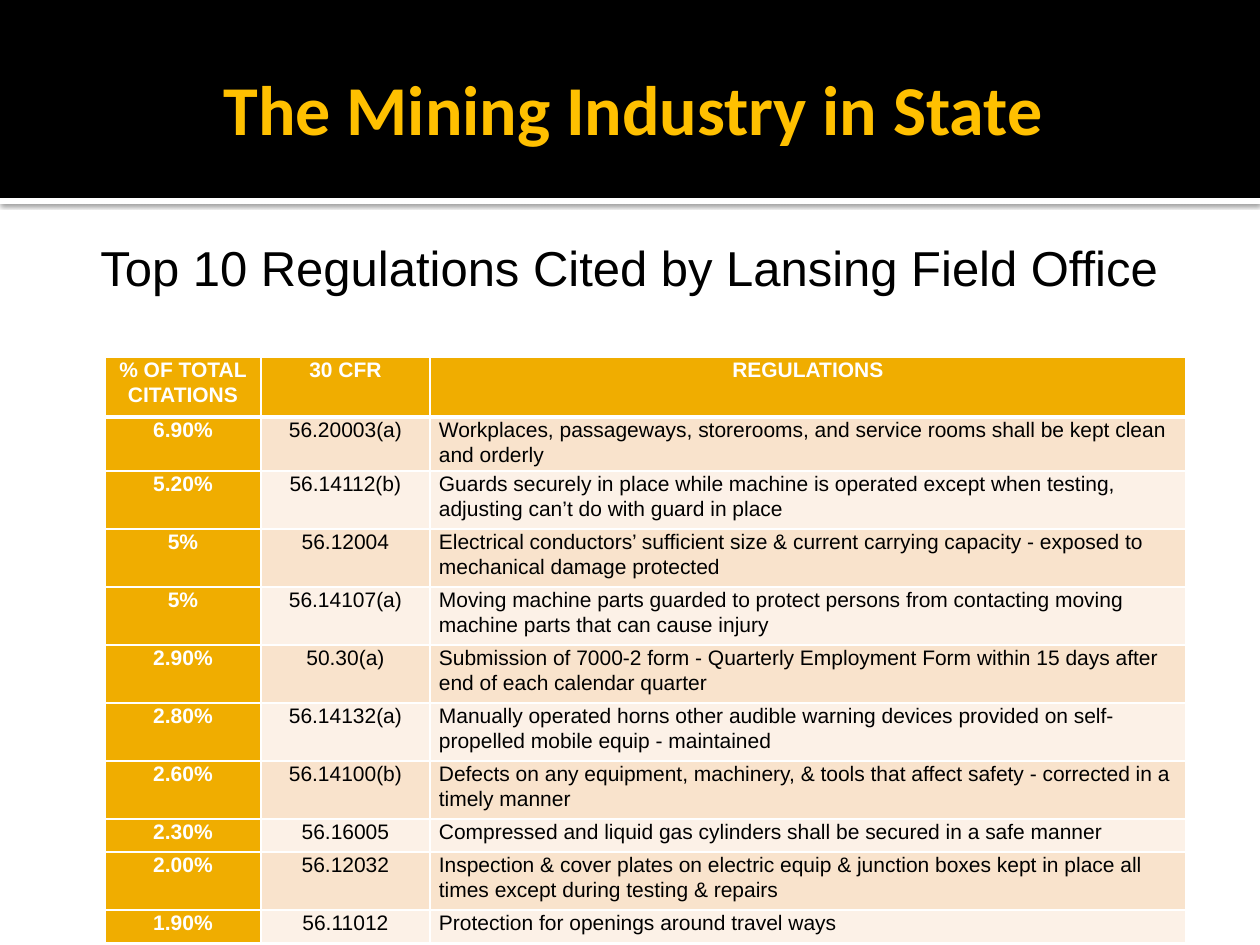
from lxml.etree import SubElement
from pptx import Presentation
from pptx.dml.color import RGBColor
from pptx.enum.shapes import MSO_SHAPE
from pptx.enum.text import MSO_ANCHOR, PP_ALIGN
from pptx.oxml.ns import qn
from pptx.util import Emu, Pt

PX_PER_INCH = 126
BLACK, WHITE, GOLD, AMBER = "000000", "FFFFFF", "FFC000", "F0AD00"
BANDS = ("F9E3CC", "FCF1E7")
COLUMN_WIDTHS = (156, 169, 756)
HEADER_HEIGHT, ONE_LINE, TWO_LINES = 60, 33, 58

HEADINGS = ("% OF TOTAL\nCITATIONS", "30 CFR", "REGULATIONS")
# Share of citations, section, regulation, row height
CITATIONS = (
    ("6.90%", "56.20003(a)", "Workplaces, passageways, storerooms, and service rooms "
     "shall be kept clean and orderly", ONE_LINE),
    ("5.20%", "56.14112(b)", "Guards securely in place while machine is operated except "
     "when testing, adjusting can’t do with guard in place", TWO_LINES),
    ("5%", "56.12004", "Electrical conductors’ sufficient size & current carrying "
     "capacity - exposed to mechanical damage protected", TWO_LINES),
    ("5%", "56.14107(a)", "Moving machine parts guarded to protect persons from "
     "contacting moving machine parts that can cause injury", TWO_LINES),
    ("2.90%", "50.30(a)", "Submission of 7000-2 form - Quarterly Employment Form within "
     "15 days after end of each calendar quarter", TWO_LINES),
    ("2.80%", "56.14132(a)", "Manually operated horns other audible warning devices "
     "provided on self- propelled mobile equip - maintained", TWO_LINES),
    ("2.60%", "56.14100(b)", "Defects on any equipment, machinery, & tools that affect "
     "safety - corrected in a timely manner", TWO_LINES),
    ("2.30%", "56.16005", "Compressed and liquid gas cylinders shall be secured in a "
     "safe manner", ONE_LINE),
    ("2.00%", "56.12032", "Inspection & cover plates on electric equip & junction boxes "
     "kept in place all times except during testing & repairs", TWO_LINES),
    ("1.90%", "56.11012", "Protection for openings around travel ways", ONE_LINE),
)


def px(length):
    return Emu(round(length * 914400 / PX_PER_INCH))


def color(value):
    return RGBColor.from_string(value)


def format_text(frame, font, size, fill, bold=False, align=PP_ALIGN.CENTER, spacing=None):
    for para in frame.paragraphs:
        para.alignment = align
        para.line_spacing = spacing
        for span in para.runs:
            span.font.name = font
            span.font.size = Pt(size)
            span.font.bold = bold
            span.font.color.rgb = color(fill)


def add_bar(page, left, top, width, height, fill):
    bar = page.shapes.add_shape(MSO_SHAPE.RECTANGLE, px(left), px(top), px(width), px(height))
    bar.shadow.inherit = False
    bar.fill.solid()
    bar.fill.fore_color.rgb = color(fill)
    bar.line.fill.background()
    return bar


def add_text(page, left, top, width, height, text, **style):
    box = page.shapes.add_textbox(px(left), px(top), px(width), px(height))
    box.text_frame.word_wrap = True
    box.text_frame.text = text
    format_text(box.text_frame, **style)
    return box


def add_shadow(shape):
    effects = shape._element.spPr.find(qn("a:effectLst"))
    shadow = SubElement(effects, qn("a:outerShdw"), blurRad=str(Pt(2.5)),
                        dist=str(Pt(0.8)), dir="5400000", algn="tl", rotWithShape="0")
    tint = SubElement(shadow, qn("a:srgbClr"), val=BLACK)
    SubElement(tint, qn("a:alpha"), val="60000")


def add_banner(page, left, top, width, height):
    rule = add_bar(page, left, top + height, width, 6, WHITE)
    add_shadow(rule)
    add_bar(page, left, top, width, height, BLACK)
    title = add_text(page, left + 63, top + 21, width - 126, 173, "The Mining Industry in State",
                     font="Calibri", size=40, fill=GOLD, bold=True)
    title.text_frame.vertical_anchor = MSO_ANCHOR.MIDDLE
    title.text_frame.margin_right = px(6)


def set_borders(cell, top, bottom):
    properties = cell._tc.get_or_add_tcPr()
    for side, width in (("L", 1), ("R", 1), ("T", top), ("B", bottom)):
        line = SubElement(properties, qn(f"a:ln{side}"), w=str(Pt(width)))
        paint = SubElement(line, qn("a:solidFill"))
        SubElement(paint, qn("a:srgbClr"), val=WHITE)


def fill_cell(cell, text, row, column):
    is_heading = row == 0 or column == 0
    cell.margin_left = cell.margin_right = px(9)
    cell.margin_top = cell.margin_bottom = 0
    set_borders(cell, top=3 if row == 1 else 1, bottom=3 if row == 0 else 1)
    cell.fill.solid()
    cell.fill.fore_color.rgb = color(AMBER if is_heading else BANDS[(row - 1) % 2])
    cell.text_frame.text = text
    is_regulation = row > 0 and column == 2
    format_text(cell.text_frame, "Arial", 12, WHITE if is_heading else BLACK, is_heading,
                PP_ALIGN.LEFT if is_regulation else PP_ALIGN.CENTER, 1.07)


def add_citation_table(page, left, top):
    rows = [(*HEADINGS, HEADER_HEIGHT), *CITATIONS]
    table = page.shapes.add_table(len(rows), len(COLUMN_WIDTHS), px(left), px(top),
                                  px(sum(COLUMN_WIDTHS)), px(sum(row[-1] for row in rows))).table
    for column, width in zip(table.columns, COLUMN_WIDTHS):
        column.width = px(width)
    for row, (*texts, height) in enumerate(rows):
        table.rows[row].height = px(height)
        for column, text in enumerate(texts):
            fill_cell(table.cell(row, column), text, row, column)
    # Extra space below the first share
    table.cell(1, 0).text_frame.paragraphs[0].space_after = Pt(8)


def main():
    deck = Presentation()
    deck.slide_width, deck.slide_height = px(1260), px(945)
    page = deck.slides.add_slide(deck.slide_layouts[6])

    # Title banner
    add_banner(page, 0, 0, 1260, 198)
    # Headline
    add_text(page, 62, 231, 1134, 72, "Top 10 Regulations Cited by Lansing Field Office",
             font="Arial", size=28, fill=BLACK)
    # Citations
    add_citation_table(page, 105, 357)

    deck.save("out.pptx")


if __name__ == "__main__":
    main()
